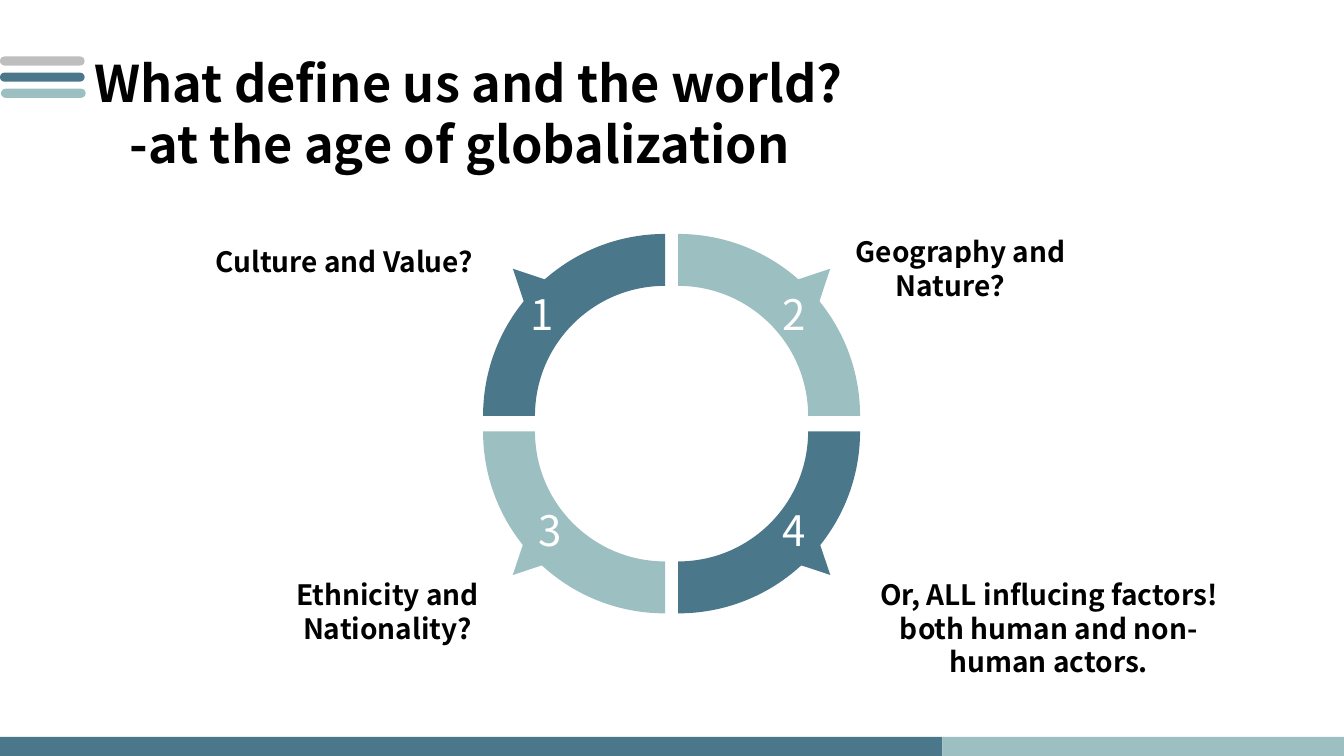
import pptx
import pptx.dml.color
import pptx.enum.shapes
import pptx.enum.text
import pptx.oxml
import pptx.oxml.ns
import pptx.util

TEAL = pptx.dml.color.RGBColor(0x4A, 0x77, 0x8A)
MINT = pptx.dml.color.RGBColor(0x9C, 0xBF, 0xC1)
GREY = pptx.dml.color.RGBColor(0xBE, 0xBE, 0xBE)
BLACK = pptx.dml.color.RGBColor(0, 0, 0)
WHITE = pptx.dml.color.RGBColor(255, 255, 255)
FONT = "Noto Sans CJK SC"
COLUMNS, ROWS = 133.33, 75
CELL = pptx.util.Inches(0.1)
SHAPES = pptx.enum.shapes.MSO_SHAPE
ALIGN = pptx.enum.text.PP_ALIGN


def cells(*lengths):
    return [round(length * CELL) for length in lengths]


def paint(shape, color):
    shape.shadow.inherit = False
    shape.fill.solid()
    shape.fill.fore_color.rgb = color
    shape.line.fill.background()
    return shape


def add_block(slide, kind, box, color, rotation=0):
    block = paint(slide.shapes.add_shape(kind, *cells(*box)), color)
    block.rotation = rotation
    return block


def add_text(slide, box, text, size=20, color=BLACK, bold=True,
             align=ALIGN.CENTER, wrap=True, indents=()):
    label = slide.shapes.add_textbox(*cells(*box))
    frame = label.text_frame
    frame.word_wrap = wrap
    frame.auto_size = pptx.enum.text.MSO_AUTO_SIZE.SHAPE_TO_FIT_TEXT
    frame.text = text
    for paragraph in frame.paragraphs:
        paragraph.alignment = align
        for run in paragraph.runs:
            run.font.name = FONT
            run.font.size = pptx.util.Pt(size)
            run.font.bold = bold
            run.font.color.rgb = color
            east_asian = pptx.oxml.parse_xml(
                f'<a:ea {pptx.oxml.ns.nsdecls("a")} typeface="{FONT}"/>')
            run.font._element.append(east_asian)
    for paragraph, indent in zip(frame.paragraphs, indents):
        paragraph._p.get_or_add_pPr().set("marL", str(cells(indent)[0]))


def add_heading(slide, box):
    left, top, width, height = box
    stripe_width, stripe_height, pitch = 8.4, 0.9, 1.6
    for index, (color, shift) in enumerate([(GREY, 0), (TEAL, 0), (MINT, 0.1)]):
        stripe = add_block(
            slide, SHAPES.ROUNDED_RECTANGLE,
            (left + shift, top + 0.9 + index * pitch, stripe_width, stripe_height), color)
        stripe.adjustments[0] = 0.5
    add_text(slide, (left + stripe_width, top, width - stripe_width, height),
             "What define us and the world?\n-at the age of globalization",
             size=36, align=ALIGN.JUSTIFY, indents=(0, 3.5))


def bend(line, controls):
    curve = pptx.oxml.parse_xml(f'<a:cubicBezTo {pptx.oxml.ns.nsdecls("a")}/>')
    for x, y in controls:
        curve.append(pptx.oxml.parse_xml(
            f'<a:pt {pptx.oxml.ns.nsdecls("a")} x="{x}" y="{y}"/>'))
    curve.append(line[0])
    line.getparent().replace(line, curve)


def add_quarter(slide, corner, across, down, color):
    outer, inner, roundness = 18.05, 12.9, 0.5523

    def spot(x, y):
        return cells(corner[0] + across * x, corner[1] + down * y)

    builder = slide.shapes.build_freeform(*spot(0, outer), scale=1.0)
    builder.add_line_segments(
        [spot(outer, 0), spot(inner, 0), spot(0, inner)], close=True)
    quarter = paint(builder.convert_to_shape(), color)
    lines = list(quarter._element.iter(pptx.oxml.ns.qn("a:lnTo")))
    outer_arc = [(outer * roundness, outer), (outer, outer * roundness)]
    inner_arc = [(inner, inner * roundness), (inner * roundness, inner)]
    for line, arc in ((lines[0], outer_arc), (lines[2], inner_arc)):
        spots = [spot(*control) for control in arc]
        bend(line, [(x - quarter.left, y - quarter.top) for x, y in spots])


def add_ring(slide, box):
    left, top, width, height = box
    middle, center = left + width / 2, top + height / 2
    gap_x, gap_y, pointer = 0.65, 0.77, 3.1
    quarters = [("1", -1, -1, TEAL, 315, -14.95), ("2", 1, -1, MINT, 45, 10.05),
                ("3", -1, 1, MINT, 225, -14.15), ("4", 1, 1, TEAL, 135, 10.05)]
    for number, across, down, color, rotation, shift in quarters:
        add_quarter(slide, (middle + across * gap_x, center + down * gap_y),
                    across, down, color)
        add_block(slide, SHAPES.ISOSCELES_TRIANGLE,
                  (middle + across * 14.65 - pointer / 2,
                   center - 0.18 + down * 14.1 - pointer / 2, pointer, pointer),
                  color, rotation)
        add_text(slide, (middle + shift, center - 3.18 + down * 10.75, 4.4, 6),
                 number, size=30, color=WHITE, bold=False,
                 align=ALIGN.LEFT, wrap=False)


def add_factors(slide, box):
    left, top, width, height = box
    factors = [(0, 1, 39.9, 4.4, "Culture and Value?"),
               (69.3, 0, 23.6, 7.7, "Geography and Nature？ "),
               (8.7, 34, 31.1, 7.7, "Ethnicity and Nationality?"),
               (69.3, 34, 41.1, 11.1,
                "Or, ALL influcing factors! both human and non-human actors.")]
    for x, y, factor_width, factor_height, text in factors:
        add_text(slide, (left + x, top + y, factor_width, factor_height), text)


def add_footer(slide, box):
    left, top, width, height = box
    split = 93.5
    add_block(slide, SHAPES.RECTANGLE, (left, top, split, height), TEAL)
    add_block(slide, SHAPES.RECTANGLE,
              (left + split, top, width - split, height), MINT)


def main():
    deck = pptx.Presentation()
    deck.slide_width, deck.slide_height = cells(COLUMNS, ROWS)
    slide = deck.slides.add_slide(deck.slide_layouts[6])
    add_heading(slide, (0, 4.7, 94.9, 13.1))
    add_footer(slide, (0, ROWS - 1.9, COLUMNS, 1.9))
    add_ring(slide, (47.97, 23.2, 37.3, 37.66))
    add_factors(slide, (14.2, 22.8, 110.4, 45.1))
    deck.save("out.pptx")


if __name__ == "__main__":
    main()
